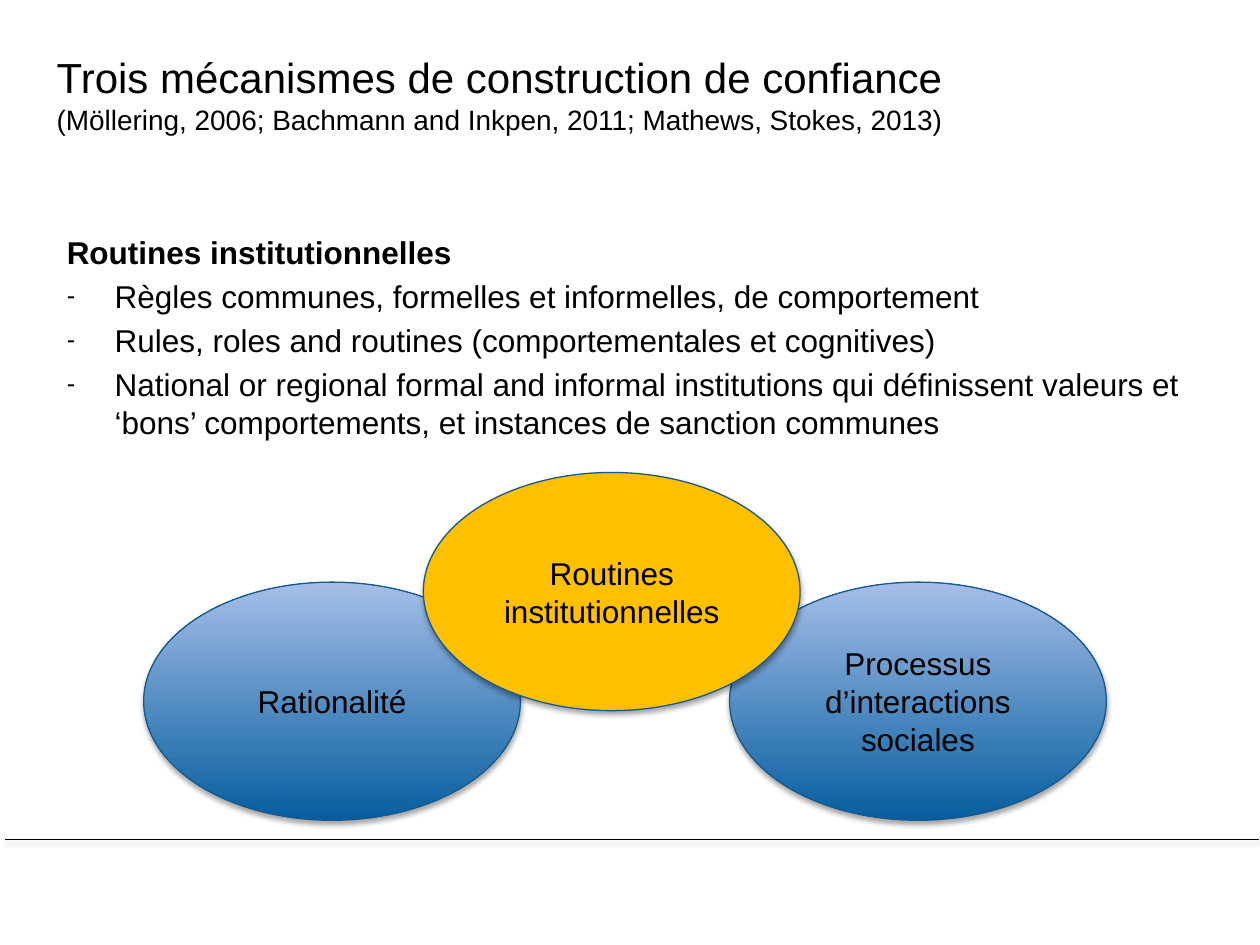
from dataclasses import dataclass

from lxml import etree
from pptx import Presentation
from pptx.dml.color import RGBColor
from pptx.enum.shapes import MSO_CONNECTOR, MSO_SHAPE
from pptx.enum.text import MSO_ANCHOR, MSO_AUTO_SIZE, PP_ALIGN
from pptx.oxml.ns import qn
from pptx.util import Inches, Pt

LEFT, CENTER = PP_ALIGN.LEFT, PP_ALIGN.CENTER
TOP, MIDDLE = MSO_ANCHOR.TOP, MSO_ANCHOR.MIDDLE
NO_FIT = MSO_AUTO_SIZE.NONE
OVAL, STRAIGHT = MSO_SHAPE.OVAL, MSO_CONNECTOR.STRAIGHT

WIDE, HIGH = 10, 7.5
OVAL_W, OVAL_H = 2.99, 1.89
LOW, TALL = 4.62, 3.75
COLORS = {
    "text": "000000", "deep": "065E9F", "pale": "A5BEE8",
    "edge": "15598D", "gold": "FFC000", "shade": "808080",
}
TITLE = [
    ("Trois mécanismes de construction de confiance", 24),
    ("(Möllering, 2006; Bachmann and Inkpen, 2011; Mathews, Stokes, 2013)", 16),
]
HEAD = "Routines institutionnelles"
RULES = [
    "Règles communes, formelles et informelles, de comportement",
    "Rules, roles and routines (comportementales et cognitives)",
    "National or regional formal and informal institutions qui définissent "
    "valeurs et ‘bons’ comportements, et instances de sanction communes",
]


@dataclass
class Factor:
    text: str
    left: float
    top: float
    gold: bool = False


FACTORS = [
    Factor("Processus d’interactions sociales", 5.79, LOW),
    Factor("Rationalité", 1.14, LOW),
    Factor("Routines institutionnelles", 3.36, TALL, True),
]


def tint(name: str) -> RGBColor:
    return RGBColor.from_string(COLORS[name])


def style(para, size: float, bold: bool = False, align=LEFT) -> None:
    para.alignment = align
    for key, value in {"name": "Arial", "size": Pt(size), "bold": bold}.items():
        setattr(para.font, key, value)
    para.font.color.rgb = tint("text")


def shade(shape, color: str, alpha: int, dist: float) -> None:
    """Cast a soft shadow straight down; call after fill and line are set."""
    effects = etree.SubElement(shape.element.spPr, qn("a:effectLst"))
    cast = etree.SubElement(
        effects, qn("a:outerShdw"), blurRad=str(Pt(3.1)), dist=str(Pt(dist)),
        dir="5400000", rotWithShape="0")
    hue = etree.SubElement(cast, qn("a:srgbClr"), val=COLORS[color])
    etree.SubElement(hue, qn("a:alpha"), val=str(alpha * 1000))


def bullet(para, mark: str = "") -> None:
    """Hang the paragraph on a mark, or clear the template's bullet."""
    props = para._p.get_or_add_pPr()
    hang = Inches(0.38) if mark else 0
    props.set("marL", str(hang))
    props.set("indent", str(-hang))
    if mark:
        etree.SubElement(props, qn("a:buSzPct"), val="80000")
        etree.SubElement(props, qn("a:buChar"), char=mark)
    else:
        etree.SubElement(props, qn("a:buNone"))


def place(holder, left: float, top: float, width: float, height: float):
    """Move a placeholder and return its text frame."""
    spots = {"left": left, "top": top, "width": width, "height": height}
    for key, value in spots.items():
        setattr(holder, key, Inches(value))
    frame = holder.text_frame
    for key, value in {"word_wrap": True, "auto_size": NO_FIT,
                       "vertical_anchor": TOP}.items():
        setattr(frame, key, value)
    return frame


def add_title(slide) -> None:
    frame = place(slide.shapes.title, 0.35, 0.36, 9, 0.63)
    frame.text = "\n".join(text for text, _ in TITLE)
    for para, (_, size) in zip(frame.paragraphs, TITLE):
        style(para, size)


def add_list(slide) -> None:
    frame = place(slide.placeholders[1], 0.43, 1.8, 9.13, 1.85)
    frame.text = "\n".join([HEAD, *RULES])
    for row, para in enumerate(frame.paragraphs):
        bullet(para, "-" if row else "")
        para.space_before = Pt(3.6 if row else 0)
        style(para, 18, bold=row == 0)


def add_rule(slide) -> None:
    rule = slide.shapes.add_connector(
        STRAIGHT, Inches(0.04), Inches(6.66), Inches(WIDE - 0.01), Inches(6.66))
    rule.line.color.rgb = tint("text")
    rule.line.width = Pt(0.25)
    shade(rule, "shade", 38, 1.6)


def add_oval(slide, item: Factor) -> None:
    oval = slide.shapes.add_shape(
        OVAL, Inches(item.left), Inches(item.top), Inches(OVAL_W), Inches(OVAL_H))
    if item.gold:
        oval.fill.solid()
        oval.fill.fore_color.rgb = tint("gold")
    else:
        oval.fill.gradient()
        oval.fill.gradient_angle = 90
        for stop, name in zip(oval.fill.gradient_stops, ("deep", "pale")):
            stop.color.rgb = tint(name)
    oval.line.color.rgb = tint("edge")
    oval.line.width = Pt(0.75)
    shade(oval, "text", 35, 1.8)
    frame = oval.text_frame
    frame.text = item.text
    frame.word_wrap = True
    frame.vertical_anchor = MIDDLE
    style(frame.paragraphs[0], 18, align=CENTER)


def main() -> None:
    deck = Presentation()
    deck.slide_width, deck.slide_height = Inches(WIDE), Inches(HIGH)
    slide = deck.slides.add_slide(deck.slide_layouts[1])
    add_rule(slide)
    add_title(slide)
    add_list(slide)
    for item in FACTORS:
        add_oval(slide, item)
    deck.save("out.pptx")


if __name__ == "__main__":
    main()
